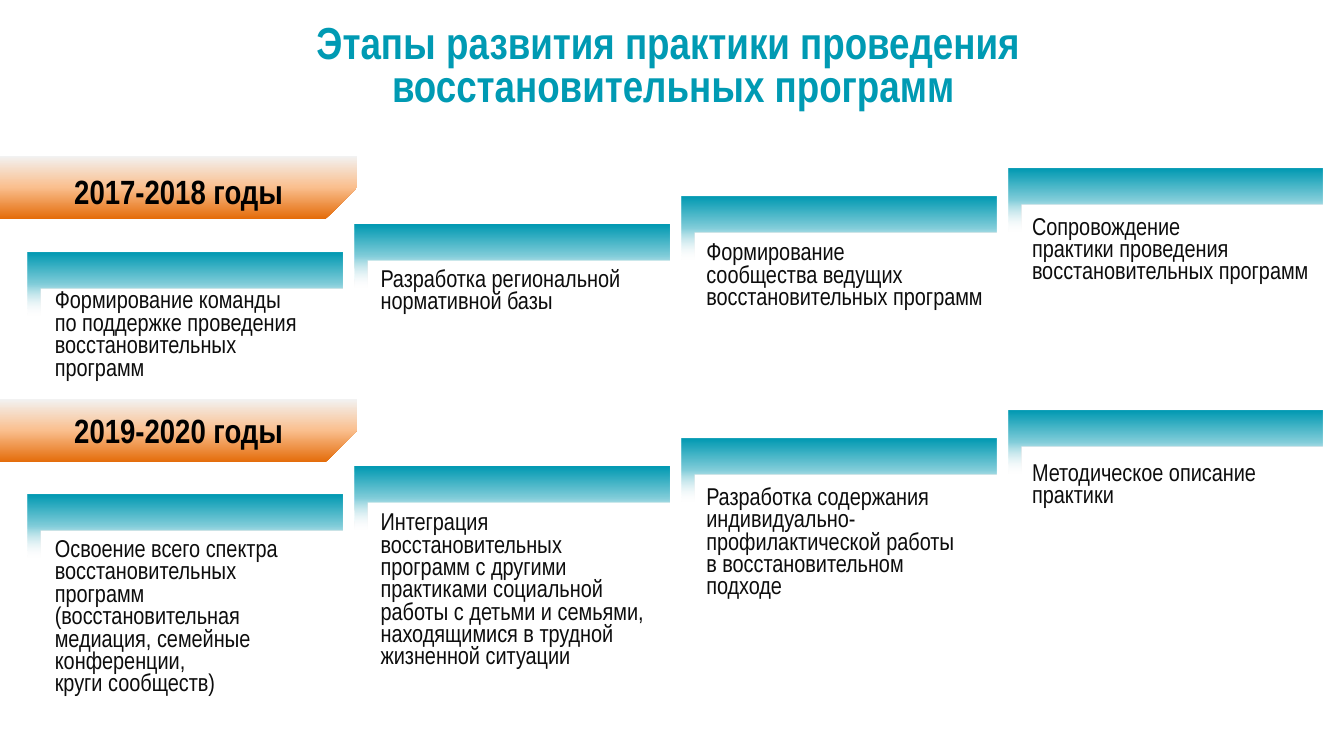
from pptx import Presentation
from pptx.dml.color import RGBColor
from pptx.enum.shapes import MSO_SHAPE
from pptx.enum.text import MSO_ANCHOR, MSO_AUTO_SIZE, PP_ALIGN
from pptx.oxml import parse_xml
from pptx.oxml.ns import nsdecls, qn
from pptx.util import Pt

THEME = {
    "font": "Arial Narrow",
    "title": (24, "009AB3", True),
    "period": (18, "000000", True),
    "body": (13, "0D0D0D", False),
    "banner": [(0, "E46C0A", 100), (51, "FAC090", 100), (100, "F2F2F2", 100)],
    "step": [(0, "F2F2F2", 0), (50, "009AB3", 49), (100, "009AB3", 100)],
}
TITLE = ["Этапы развития практики проведения ", "восстановительных программ"]
NARROW, WIDE = 157.7, 163.4

PERIODS = [
    ("2017-2018 годы", 83.5, 87.8, 135.4, [
        (152.6, NARROW, 4, ["Формирование команды", "по поддержке проведения",
                            "восстановительных программ"]),
        (141.1, NARROW, 2, ["Разработка региональной", "нормативной базы"]),
        (126.7, WIDE, 4, ["Формирование", "сообщества ведущих",
                          "восстановительных программ"]),
        (113, WIDE, 4, ["Сопровождение", "практики проведения",
                        "восстановительных программ"]),
    ]),
    ("2019-2020 годы", 213.8, 216, 265, [
        (285.8, NARROW, 7, ["Освоение всего спектра восстановительных программ "
                            "(восстановительная медиация, семейные конференции,",
                            "круги сообществ)"]),
        (271.4, NARROW, 7, ["Интеграция восстановительных программ с другими "
                            "практиками социальной работы с детьми и семьями, "
                            "находящимися в трудной жизненной ситуации"]),
        (257.8, NARROW, 5, ["Разработка содержания", "индивидуально-",
                            "профилактической работы", "в восстановительном подходе"]),
        (244.8, NARROW, 2, ["Методическое описание практики"]),
    ]),
]
BANNER_W, SHAPE_H = 191.5, 33.8
STEP_X, STEP_W, STEP_DX, STEP_DY = 15.1, 168.5, 175, 15.1
TEXT_X, TEXT_DX = 22.3, 174.5
LEADING, PADDING = 12, 7.2


def box(x, y, w, h):
    return Pt(x), Pt(y), Pt(w), Pt(h)


def write(tf, paragraphs, style, align, spacing):
    size, color, bold = THEME[style]
    tf.word_wrap = True
    tf.vertical_anchor = MSO_ANCHOR.TOP
    tf.auto_size = MSO_AUTO_SIZE.SHAPE_TO_FIT_TEXT
    for i, text in enumerate(paragraphs):
        p = tf.add_paragraph() if i else tf.paragraphs[0]
        p.alignment = align
        p.line_spacing = spacing
        p.space_before = Pt(0)
        r = p.add_run()
        r.text = text
        r.font.name = THEME["font"]
        r.font.size = Pt(size)
        r.font.bold = bold
        r.font.color.rgb = RGBColor.from_string(color)


def add_text(slide, place, paragraphs, style, align, spacing):
    tf = slide.shapes.add_textbox(*place).text_frame
    write(tf, paragraphs, style, align, spacing)


def add_gradient_shape(slide, kind, place, adjustments, stops, flip):
    sp = slide.shapes.add_shape(kind, *place)
    sp.shadow.inherit = False
    sp.line.fill.background()
    for i, value in enumerate(adjustments):
        sp.adjustments[i] = value
    spPr = sp._element.spPr
    spPr.find(qn("a:xfrm")).set(flip, "1")
    gs = "".join(
        f'<a:gs pos="{pos * 1000}"><a:srgbClr val="{color}">'
        f'<a:alpha val="{alpha * 1000}"/></a:srgbClr></a:gs>'
        for pos, color, alpha in stops)
    spPr.find(qn("a:prstGeom")).addnext(parse_xml(
        f'<a:gradFill {nsdecls("a")} rotWithShape="1"><a:gsLst>{gs}</a:gsLst>'
        '<a:lin ang="5400000" scaled="0"/></a:gradFill>'))
    return sp


def add_period(slide, label, banner_y, label_y, step_y, steps):
    add_gradient_shape(slide, MSO_SHAPE.SNIP_1_RECTANGLE,
                       box(0, banner_y, BANNER_W, SHAPE_H), [0.5],
                       THEME["banner"], "flipV")
    add_text(slide, box(0, label_y, BANNER_W, 28.8), [label], "period",
             PP_ALIGN.CENTER, 1.0)
    for i, (y, w, lines, paragraphs) in enumerate(steps):
        sp = add_gradient_shape(
            slide, MSO_SHAPE.CORNER,
            box(STEP_X + i * STEP_DX, step_y - i * STEP_DY, STEP_W, SHAPE_H),
            [0.57, 0.21], THEME["step"], "flipH")
        sp.rotation = 180
        add_text(slide, box(TEXT_X + i * TEXT_DX, y, w, lines * LEADING + PADDING),
                 paragraphs, "body", PP_ALIGN.LEFT, Pt(LEADING))


prs = Presentation()
prs.slide_width, prs.slide_height = Pt(720), Pt(405)
slide = prs.slides.add_slide(prs.slide_layouts[5])
title = slide.shapes.title
title.left, title.top, title.width, title.height = box(0.7, 10.1, 720, 54)
write(title.text_frame, TITLE, "title", PP_ALIGN.CENTER, 0.8)
for period in PERIODS:
    add_period(slide, *period)
prs.save("out.pptx")
